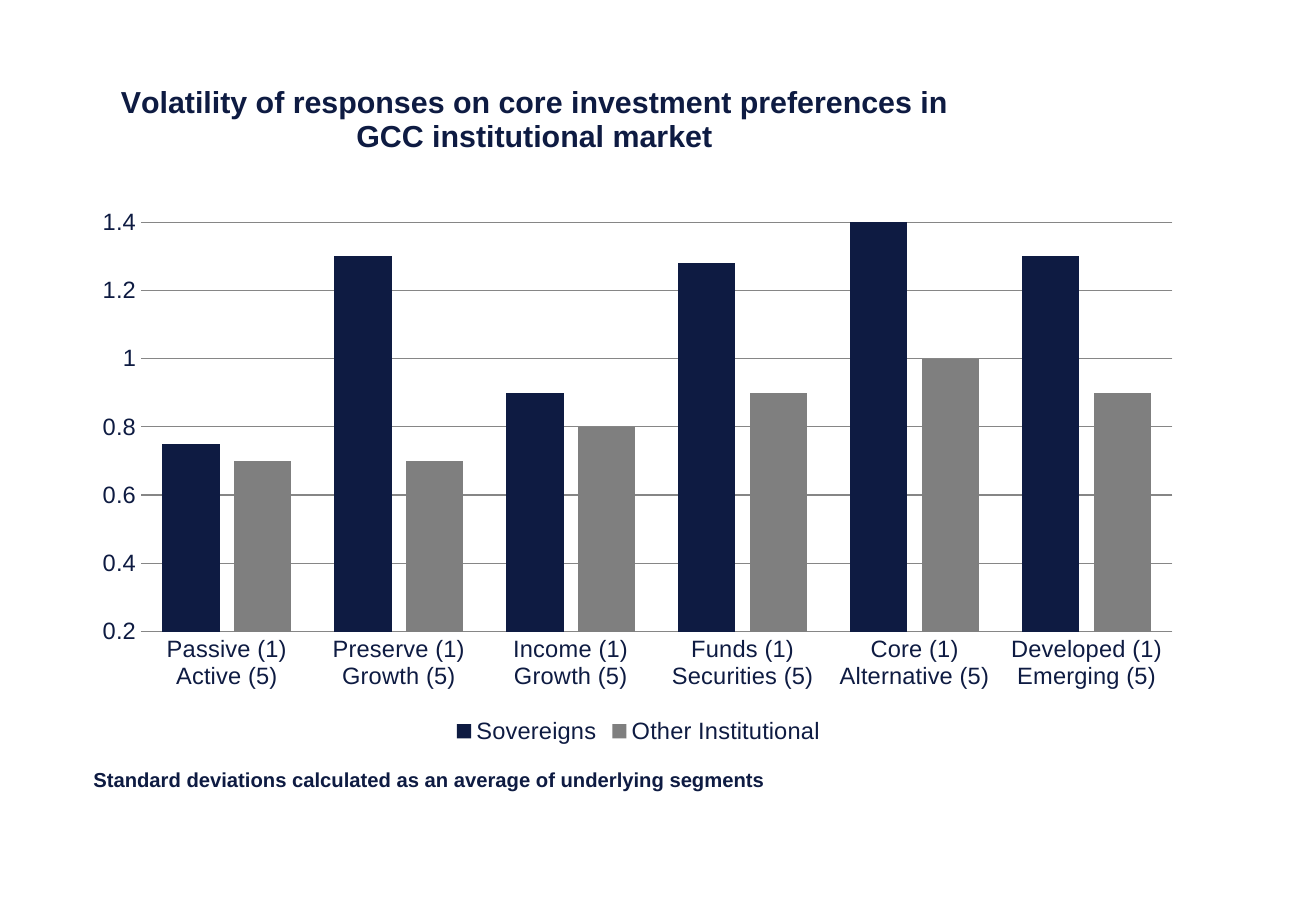
from lxml import etree
from pptx import Presentation
from pptx.chart.data import CategoryChartData
from pptx.dml.color import RGBColor
from pptx.enum.chart import XL_CHART_TYPE as ChartType, XL_LEGEND_POSITION as LegendPos, XL_TICK_MARK as Tick
from pptx.oxml.ns import qn
from pptx.util import Inches, Pt

COLORS = {"navy": "0E1B42", "gray": "7F7F7F", "grid": "868686"}
FONT = "Arial"
TITLE = "Volatility of responses on core investment preferences in GCC institutional market"
NOTE = "Standard deviations calculated as an average of underlying segments"
CATEGORIES = [
    "Passive (1)\nActive (5)",
    "Preserve (1)\nGrowth (5)",
    "Income (1)\nGrowth (5)",
    "Funds (1)\nSecurities (5)",
    "Core (1)\nAlternative (5)",
    "Developed (1)\nEmerging (5)",
]
SERIES = [
    ("Sovereigns", "navy", (0.75, 1.3, 0.9, 1.28, 1.4, 1.3)),
    ("Other Institutional", "gray", (0.7, 0.7, 0.8, 0.9, 1, 0.9)),
]
CHART_BOX = (0.67, 0.5, 9.17, 5.67)
PLOT_BOX = (1.16, 1.83, 8.49, 3.37)
TITLE_POS = (0.95, 0.63)
NOTE_BOX = (0.67, 6.22, 7.86, 0.7)


def rgb(name):
    return RGBColor.from_string(COLORS[name])


def style_font(font, size, bold=False, color="navy"):
    font.name, font.size, font.bold = FONT, Pt(size), bold
    font.color.rgb = rgb(color)


def write(tf, text, size, bold=False, color="navy", spacing=None):
    p = tf.paragraphs[0]
    p.line_spacing = spacing
    r = p.add_run()
    r.text = text
    style_font(r.font, size, bold, color)


def place(parent, index, box, inner=False):
    for old in parent.findall(qn("c:layout")):
        parent.remove(old)
    layout = etree.Element(qn("c:layout"))
    manual = etree.SubElement(layout, qn("c:manualLayout"))
    left, top, width, height = CHART_BOX
    fractions = [(box[0] - left) / width, (box[1] - top) / height]
    fractions += [length / whole for length, whole in zip(box[2:], (width, height))]
    settings = [("layoutTarget", "inner")] if inner else []
    settings += [("xMode", "edge"), ("yMode", "edge")]
    settings += [(tag, f"{value:.4f}") for tag, value in zip("xywh", fractions)]
    for tag, value in settings:
        etree.SubElement(manual, qn(f"c:{tag}")).set("val", value)
    parent.insert(index, layout)


def add_volatility_chart(s):
    data = CategoryChartData()
    data.categories = CATEGORIES
    for name, _, values in SERIES:
        data.add_series(name, values)
    chart = s.shapes.add_chart(ChartType.COLUMN_CLUSTERED, *map(Inches, CHART_BOX), data).chart
    style_font(chart.font, 14)

    chart.has_title = True
    title = chart.chart_title
    write(title.text_frame, TITLE, 18, bold=True)
    title.include_in_layout = False
    place(title._element, 1, TITLE_POS)

    chart.has_legend = True
    chart.legend.position = LegendPos.BOTTOM
    chart.legend.include_in_layout = False

    plot = chart.plots[0]
    plot.gap_width, plot.overlap, plot.vary_by_categories = 75, -25, False
    for series, (_, color, _) in zip(plot.series, SERIES):
        series.format.fill.solid()
        series.format.fill.fore_color.rgb = rgb(color)

    cat_axis, val_axis = chart.category_axis, chart.value_axis
    val_axis.minimum_scale, val_axis.maximum_scale, val_axis.major_unit = 0.2, 1.4, 0.2
    val_axis.tick_labels.number_format = "General"
    val_axis.tick_labels.number_format_is_linked = False
    val_axis.has_major_gridlines = True
    for axis in (cat_axis, val_axis):
        axis.major_tick_mark = axis.minor_tick_mark = Tick.NONE
    for line in (cat_axis.format.line, val_axis.major_gridlines.format.line):
        line.color.rgb = rgb("grid")
        line.width = Pt(0.75)
    val_axis.format.line.fill.background()
    place(chart._chartSpace.chart.plotArea, 0, PLOT_BOX, inner=True)


def main():
    prs = Presentation()
    prs.slide_width, prs.slide_height = Inches(10.83), Inches(7.5)
    s = prs.slides.add_slide(prs.slide_layouts[6])
    add_volatility_chart(s)
    tf = s.shapes.add_textbox(*map(Inches, NOTE_BOX)).text_frame
    tf.word_wrap = True
    write(tf, NOTE, 12, bold=True, spacing=Pt(18))
    prs.save("out.pptx")


if __name__ == "__main__":
    main()
